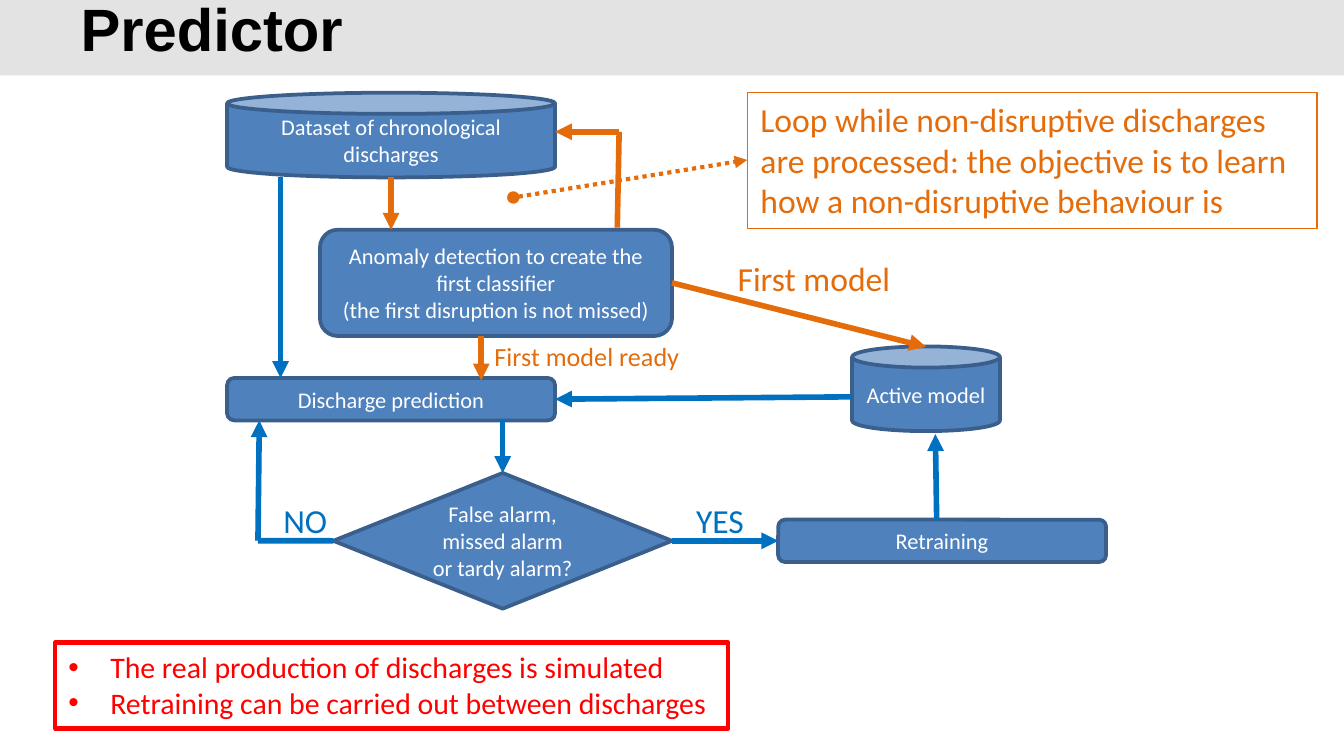
from lxml.etree import SubElement
from pptx import Presentation
from pptx.dml.color import RGBColor
from pptx.enum.dml import MSO_LINE
from pptx.enum.shapes import MSO_CONNECTOR, MSO_SHAPE
from pptx.enum.text import MSO_ANCHOR, PP_ALIGN
from pptx.oxml.ns import qn
from pptx.shapes.autoshape import Shape
from pptx.util import Pt

BLACK = RGBColor(0x00, 0x00, 0x00)
WHITE = RGBColor(0xFF, 0xFF, 0xFF)
GRAY = RGBColor(0xE3, 0xE3, 0xE3)
STEEL = RGBColor(0x4F, 0x81, 0xBD)
NAVY = RGBColor(0x3A, 0x5F, 0x8C)
BLUE = RGBColor(0x00, 0x70, 0xC0)
ORANGE = RGBColor(0xE4, 0x6C, 0x0A)
RED = RGBColor(0xFF, 0x00, 0x00)

TOP, LEFT, RIGHT = 0, 1, 3


class Art:
    """Draws styled elements on one slide; lengths are in points."""

    def __init__(self, slide):
        self.slide = slide
        self.shapes = slide.shapes
        self.face = "Calibri"

    def style(self, para, size, color):
        font = para.font
        font.name, font.size = self.face, Pt(size)
        font.color.rgb = color

    def title(self, text):
        """Fill the title placeholder and lay the gray band behind it."""
        title = self.shapes.title
        title.left, title.top = Pt(36), Pt(4.3)
        title.width, title.height = Pt(594), Pt(27.4)
        frame = title.text_frame
        frame.text = text
        frame.vertical_anchor = MSO_ANCHOR.MIDDLE
        para = frame.paragraphs[0]
        para.alignment = PP_ALIGN.LEFT
        para.line_spacing = Pt(32)
        self.style(para, 32, BLACK)
        para.font.name, para.font.bold = "Arial", True
        band = self.shapes.add_shape(MSO_SHAPE.RECTANGLE, 0, 0, Pt(720), Pt(40.4))
        band.shadow.inherit = False
        band.fill.solid()
        band.fill.fore_color.rgb = GRAY
        band.line.fill.background()
        title.element.addprevious(band.element)

    def node(self, kind, x, y, wide, high, text):
        box = self.shapes.add_shape(kind, Pt(x), Pt(y), Pt(wide), Pt(high))
        box.shadow.inherit = False
        box.fill.solid()
        box.fill.fore_color.rgb = STEEL
        box.line.color.rgb, box.line.width = NAVY, Pt(2)
        frame = box.text_frame
        frame.text = text
        frame.vertical_anchor = MSO_ANCHOR.MIDDLE
        for para in frame.paragraphs:
            para.alignment = PP_ALIGN.CENTER
            self.style(para, 12, WHITE)
        return box

    def note(self, x, y, wide, high, text, size, color, edge=0, wrap=False, dots=False):
        """Add a text box, framed if edge is set and bulleted if dots is set."""
        box = self.shapes.add_textbox(Pt(x), Pt(y), Pt(wide), Pt(high))
        if edge:
            box.line.color.rgb, box.line.width = color, Pt(edge)
        frame = box.text_frame
        frame.text = text
        frame.word_wrap = wrap
        for para in frame.paragraphs:
            if dots:
                self.bullet(para)
            self.style(para, size, color)

    def bullet(self, para):
        props = para._p.get_or_add_pPr()
        props.set("marL", str(Pt(22.5)))
        props.set("indent", str(-Pt(22.5)))
        SubElement(props, qn("a:buFont")).set("typeface", "Arial")
        SubElement(props, qn("a:buChar")).set("char", "•")

    def link(self, start, end, color, width=3, head=None, tail="triangle", dash=None):
        """Join two spots, each an (x, y) point or a (box, site) pair."""
        line = self.shapes.add_connector(MSO_CONNECTOR.STRAIGHT, 0, 0, 0, 0)
        if isinstance(start[0], Shape):
            line.begin_connect(*start)
        else:
            line.begin_x, line.begin_y = map(Pt, start)
        if isinstance(end[0], Shape):
            line.end_connect(*end)
        else:
            line.end_x, line.end_y = map(Pt, end)
        line.line.color.rgb, line.line.width = color, Pt(width)
        if dash:
            line.line.dash_style = dash
        props = line.element.spPr
        stroke = props.find(qn("a:ln"))
        for tag, tip in (("a:headEnd", head), ("a:tailEnd", tail)):
            if tip:
                SubElement(stroke, qn(tag)).set("type", tip)
        SubElement(props, qn("a:effectLst"))


def main():
    deck = Presentation()
    deck.slide_width, deck.slide_height = Pt(720), Pt(405)
    art = Art(deck.slides.add_slide(deck.slide_layouts[5]))
    art.title("Predictor")

    art.note(29.5, 344.2, 360.7, 46.1,
             "The real production of discharges is simulated\n"
             "Retraining can be carried out between discharges",
             16, RED, edge=2.25, dots=True)
    art.note(400.3, 49.7, 305.3, 72.7,
             "Loop while non-disruptive discharges are processed: "
             "the objective is to learn how a non-disruptive behaviour is",
             18, ORANGE, edge=0.75, wrap=True)
    art.link((275, 105.8), (400.3, 85.7), ORANGE, 2.25, head="oval",
             dash=MSO_LINE.ROUND_DOT)

    can, bar = MSO_SHAPE.CAN, MSO_SHAPE.ROUNDED_RECTANGLE
    art.node(can, 121.7, 49.7, 175.7, 45.4, "Dataset of chronological discharges")
    detect = art.node(bar, 171.4, 123.1, 188.6, 56.9,
                      "Anomaly detection to create the first classifier\n"
                      "(the first disruption is not missed)")
    art.node(can, 456.5, 185.6, 79.2, 45.4, "Active model")
    predict = art.node(bar, 121.7, 202.5, 175.7, 22.7, "Discharge prediction")
    check = art.node(MSO_SHAPE.DIAMOND, 178.6, 253.4, 181.4, 72.7,
                     "False alarm, missed alarm or tardy alarm?")
    train = art.node(bar, 416.9, 278.4, 175.7, 22.7, "Retraining")

    # First model
    art.link((209.5, 95), (209.5, 123.1), ORANGE)
    art.link((detect, RIGHT), (496.1, 185.8), ORANGE)
    art.link((330.7, 122), (331.7, 70.6), ORANGE, tail=None)
    art.link((331.7, 70.6), (297.4, 70.6), ORANGE)
    art.link((257.8, 180), (257.8, 203.8), ORANGE)

    # Prediction and retraining loop
    art.link((150.3, 95), (150.3, 202.5), BLUE)
    art.link((269.3, 225.2), (check, TOP), BLUE)
    art.link((check, LEFT), (138.2, 289.7), BLUE, tail=None)
    art.link((138.2, 289.7), (138.9, 225.2), BLUE)
    art.link((check, RIGHT), (train, LEFT), BLUE)
    art.link((501.8, 278.4), (501.1, 232.6), BLUE)
    art.link((456.5, 212.6), (predict, RIGHT), BLUE)

    for x, y, wide, high, text, size, color in (
        (144.7, 264.2, 38.2, 29, "NO", 18, BLUE),
        (365.8, 264.2, 40.3, 29, "YES", 18, BLUE),
        (388.1, 134.6, 97.2, 29, "First model", 18, ORANGE),
        (257.8, 178.6, 114.5, 24.2, "First model ready", 14, ORANGE),
    ):
        art.note(x, y, wide, high, text, size, color)

    deck.save("out.pptx")


if __name__ == "__main__":
    main()
